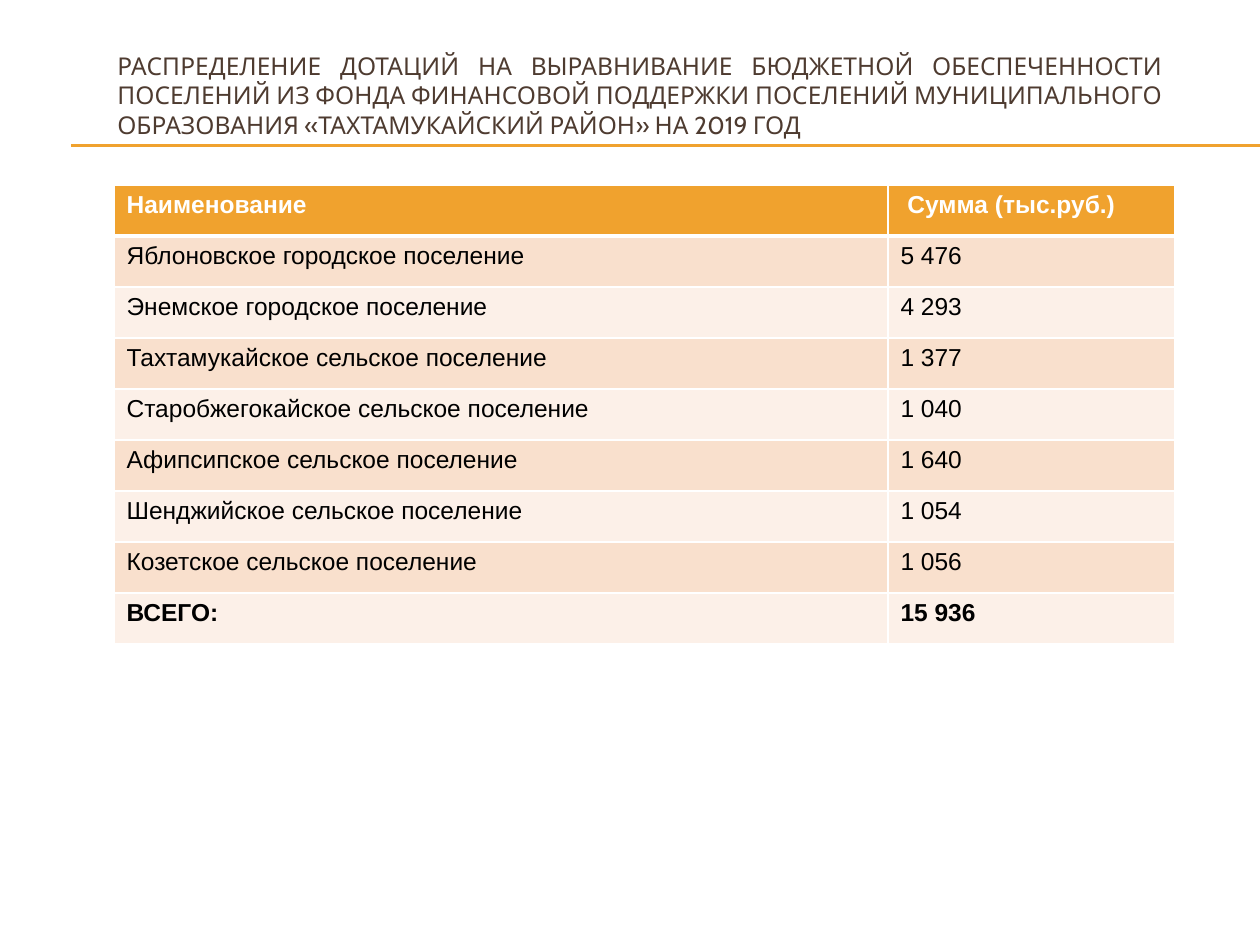
"""Build the slide with the table of settlement grants for 2019."""
from dataclasses import dataclass

from lxml import etree
from pptx import Presentation
from pptx import util as u
from pptx.dml.color import RGBColor
from pptx.enum import shapes, text
from pptx.oxml import ns

PX = 914400 / 126


@dataclass(frozen=True)
class Theme:
    accent: str = "F0A22E"
    title: str = "4E3B30"
    body: str = "000000"
    white: str = "FFFFFF"
    bands: tuple[str, str] = ("F9E0CD", "FCF0E8")
    title_font: str = "Cabin"
    table_font: str = "Arial"
    size: int = 14
    rule: float = 0.75
    border: int = 1
    header_border: int = 3


@dataclass(frozen=True)
class Row:
    name: str
    amount: str
    bold: bool = False


THEME = Theme()
TITLE = (
    "РАСПРЕДЕЛЕНИЕ ДОТАЦИЙ НА ВЫРАВНИВАНИЕ БЮДЖЕТНОЙ ОБЕСПЕЧЕННОСТИ "
    "ПОСЕЛЕНИЙ ИЗ ФОНДА ФИНАНСОВОЙ ПОДДЕРЖКИ ПОСЕЛЕНИЙ МУНИЦИПАЛЬНОГО "
    "ОБРАЗОВАНИЯ «ТАХТАМУКАЙСКИЙ РАЙОН» НА 2019 ГОД"
)
ROWS = [
    Row("Наименование", " Сумма (тыс.руб.)", True),
    Row("Яблоновское городское поселение", "5 476"),
    Row("Энемское городское поселение", "4 293"),
    Row("Тахтамукайское сельское поселение", "1 377"),
    Row("Старобжегокайское сельское поселение", "1 040"),
    Row("Афипсипское сельское поселение", "1 640"),
    Row("Шенджийское сельское поселение", "1 054"),
    Row("Козетское сельское поселение", "1 056"),
    Row("ВСЕГО:", "15 936", True),
]
COLUMN_WIDTHS = (774, 287)
ROW_HEIGHT = 51


def px(length: int) -> u.Emu:
    """Turn whole pixels into EMU."""
    return u.Emu(round(length * PX))


def style(para, font: str, color: str, bold: bool = False) -> None:
    """Format every run of a paragraph."""
    for span in para.runs:
        span.font.name = font
        span.font.size = u.Pt(THEME.size)
        span.font.bold = bold
        span.font.color.rgb = RGBColor.from_string(color)


def draw_rule(page, left: int, right: int, top: int) -> None:
    """Draw a thin horizontal rule."""
    rule = page.shapes.add_connector(
        shapes.MSO_CONNECTOR.STRAIGHT, px(left), px(top), px(right), px(top)
    )
    rule.line.color.rgb = RGBColor.from_string(THEME.accent)
    rule.line.width = u.Pt(THEME.rule)
    etree.SubElement(rule._element.spPr, ns.qn("a:effectLst"))


def draw_title(page) -> None:
    """Place the justified title."""
    box = page.shapes.add_textbox(px(105), px(16), px(1070), px(158))
    frame = box.text_frame
    frame.word_wrap = True
    frame.vertical_anchor = text.MSO_ANCHOR.MIDDLE
    frame.text = TITLE
    para = frame.paragraphs[0]
    para.alignment = text.PP_ALIGN.JUSTIFY
    style(para, THEME.title_font, THEME.title)


def set_borders(cell, top: int, bottom: int) -> None:
    """Give a cell white borders with the given top and bottom widths."""
    side = THEME.border
    widths = {"lnL": side, "lnR": side, "lnT": top, "lnB": bottom}
    properties = cell._tc.get_or_add_tcPr()
    for index, (tag, width) in enumerate(widths.items()):
        line = etree.Element(ns.qn(f"a:{tag}"), w=str(u.Pt(width)))
        fill = etree.SubElement(line, ns.qn("a:solidFill"))
        etree.SubElement(fill, ns.qn("a:srgbClr"), val=THEME.white)
        properties.insert(index, line)


def fill_row(table, index: int, row: Row) -> None:
    """Write and format one table row."""
    header = index == 0
    fill = THEME.accent if header else THEME.bands[(index - 1) % 2]
    color = THEME.white if header else THEME.body
    top = THEME.header_border if index == 1 else THEME.border
    bottom = THEME.header_border if header else THEME.border
    for column, content in enumerate((row.name, row.amount)):
        cell = table.cell(index, column)
        cell.text_frame.text = content
        style(cell.text_frame.paragraphs[0], THEME.table_font, color, row.bold)
        cell.fill.solid()
        cell.fill.fore_color.rgb = RGBColor.from_string(fill)
        set_borders(cell, top, bottom)


def draw_table(page, left: int, top: int) -> None:
    """Draw the grants table."""
    table = page.shapes.add_table(
        len(ROWS), len(COLUMN_WIDTHS), px(left), px(top),
        px(sum(COLUMN_WIDTHS)), px(ROW_HEIGHT * len(ROWS)),
    ).table
    for column, width in zip(table.columns, COLUMN_WIDTHS):
        column.width = px(width)
    for index, row in enumerate(ROWS):
        table.rows[index].height = px(ROW_HEIGHT)
        fill_row(table, index, row)


def main() -> None:
    """Assemble and save the deck."""
    deck = Presentation()
    deck.slide_width, deck.slide_height = px(1260), px(945)
    page = deck.slides.add_slide(deck.slide_layouts[6])
    for top in (145, 146):
        draw_rule(page, 71, 1260, top)
    draw_title(page)
    draw_table(page, 114, 185)
    deck.save("out.pptx")


if __name__ == "__main__":
    main()
